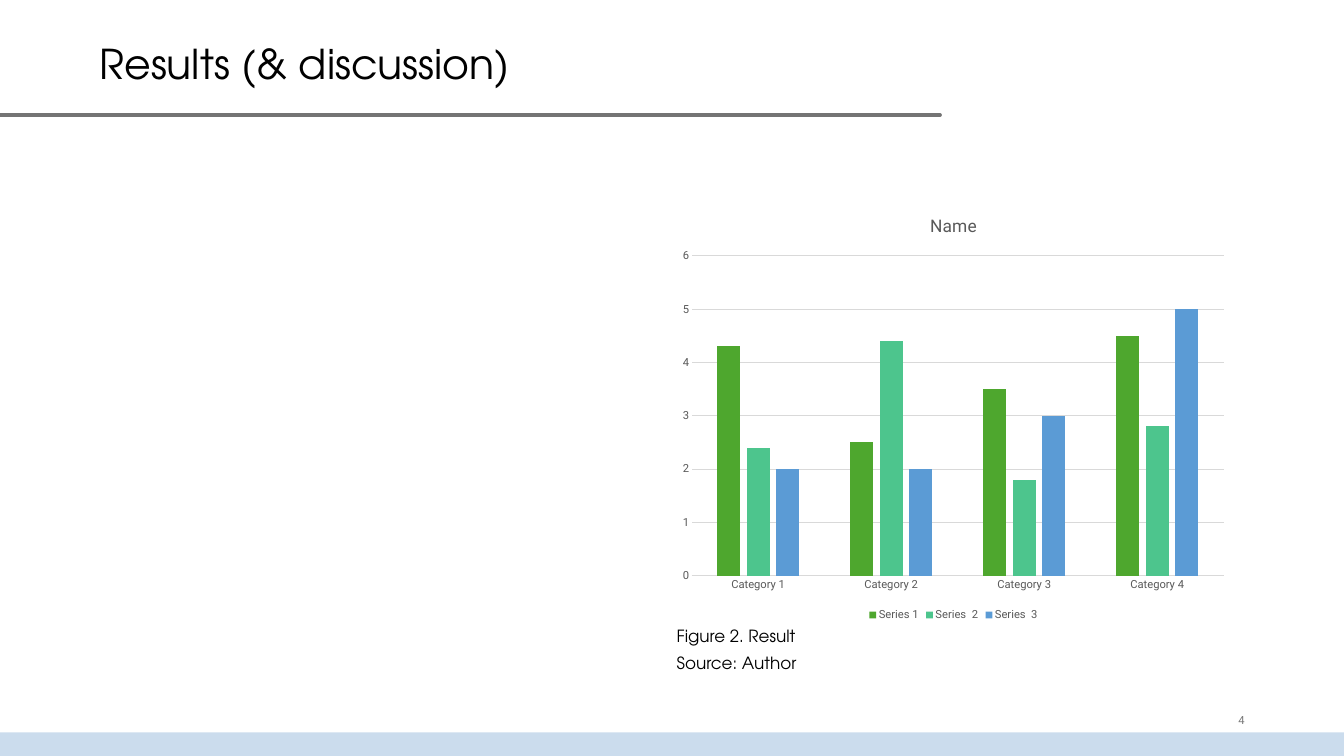
from dataclasses import dataclass

from pptx import Presentation
from pptx.chart.data import CategoryChartData
from pptx.dml.color import RGBColor
from pptx.enum import chart as ch, shapes, text
from pptx.oxml import parse_xml
from pptx.oxml.ns import nsdecls, qn
from pptx.util import Inches, Pt


@dataclass(frozen=True)
class Theme:
    head: str = "TeX Gyre Adventor"
    sans: str = "Roboto"
    ink: str = "000000"
    label: str = "595959"
    number: str = "797979"
    rule: str = "747474"
    grid: str = "D9D9D9"
    band: str = "CBDCED"
    bars: tuple = ("4EA72E", "4DC58D", "5B9BD5")
    title: float = 44
    body: float = 18
    name: float = 18.6
    small: float = 12


THEME = Theme()


def rgb(code):
    return RGBColor.from_string(code)


def style(font, face, size, color):
    font.name, font.size = face, Pt(size)
    font.color.rgb = rgb(color)


def place(shape, *box):
    shape.left, shape.top, shape.width, shape.height = map(Inches, box)


def write(frame, lines, face, size, color, align=text.PP_ALIGN.LEFT, gap=0):
    """Fill a frame with plain paragraphs, with gap points between them."""
    frame.word_wrap = True
    frame.auto_size = text.MSO_AUTO_SIZE.NONE
    for i, line in enumerate(lines):
        para = frame.add_paragraph() if i else frame.paragraphs[0]
        props = para._p.get_or_add_pPr()
        props.set("marL", "0")
        props.set("indent", "0")
        props.append(parse_xml(f"<a:buNone {nsdecls('a')}/>"))
        para.alignment = align
        para.line_spacing = 0.9
        para.space_before = Pt(gap if i else 0)
        run = para.add_run()
        run.text = line
        style(run.font, face, size, color)


def add_band(slide):
    band = slide.shapes.add_shape(
        shapes.MSO_SHAPE.RECTANGLE, 0, Inches(10.9), Inches(20), Inches(0.41))
    band.shadow.inherit = False
    band.fill.solid()
    band.fill.fore_color.rgb = rgb(THEME.band)
    band.line.fill.background()


def add_rule(slide):
    y = Inches(1.71)
    rule = slide.shapes.add_connector(
        shapes.MSO_CONNECTOR.STRAIGHT, 0, y, Inches(13.99), y)
    rule.line.color.rgb = rgb(THEME.rule)
    rule.line.width = Pt(3.75)
    rule.line._get_or_add_ln().set("cap", "rnd")
    rule._element.spPr.append(parse_xml(f"<a:effectLst {nsdecls('a')}/>"))


def add_number(slide, value):
    box = slide.shapes.add_textbox(
        Inches(14.12), Inches(10.43), Inches(4.5), Inches(0.6))
    box.text_frame.vertical_anchor = text.MSO_ANCHOR.MIDDLE
    write(box.text_frame, [value], THEME.sans, THEME.small, THEME.number,
          text.PP_ALIGN.RIGHT)


def set_plot(chart, x, y, w, h):
    """Fix the inner plot area, as fractions of the chart."""
    area = chart._chartSpace.chart.plotArea
    old = area.find(qn("c:layout"))
    if old is not None:
        area.remove(old)
    sizes = "".join(f'<c:{key} val="{val}"/>'
                    for key, val in zip("xywh", (x, y, w, h)))
    area.insert(0, parse_xml(
        f'<c:layout {nsdecls("c")}><c:manualLayout>'
        '<c:layoutTarget val="inner"/>'
        '<c:xMode val="edge"/><c:yMode val="edge"/>'
        f'{sizes}</c:manualLayout></c:layout>'))


def add_bars(slide):
    data = CategoryChartData()
    data.categories = [f"Category {n}" for n in range(1, 5)]
    data.add_series("Series 1", (4.3, 2.5, 3.5, 4.5))
    data.add_series("Series  2", (2.4, 4.4, 1.8, 2.8))
    data.add_series("Series  3", (2, 2, 3, 5))
    chart = slide.shapes.add_chart(
        ch.XL_CHART_TYPE.COLUMN_CLUSTERED, Inches(10), Inches(2.96),
        Inches(8.38), Inches(6.33), data).chart
    labels = THEME.sans, THEME.small, THEME.label
    style(chart.font, *labels)

    chart.has_title = True
    run = chart.chart_title.text_frame.paragraphs[0].add_run()
    run.text = "Name"
    style(run.font, THEME.sans, THEME.name, THEME.label)
    run.font.bold = False
    chart.chart_title.include_in_layout = False

    chart.has_legend = True
    chart.legend.position = ch.XL_LEGEND_POSITION.BOTTOM
    chart.legend.include_in_layout = False
    style(chart.legend.font, *labels)

    for axis in (chart.category_axis, chart.value_axis):
        axis.major_tick_mark = axis.minor_tick_mark = ch.XL_TICK_MARK.NONE
        style(axis.tick_labels.font, *labels)
    value = chart.value_axis
    value.minimum_scale, value.maximum_scale, value.major_unit = 0, 6, 1
    value.has_major_gridlines = True
    value.format.line.fill.background()
    for line in (chart.category_axis.format.line,
                 value.major_gridlines.format.line):
        line.color.rgb = rgb(THEME.grid)
        line.width = Pt(0.75)

    plot = chart.plots[0]
    plot.gap_width, plot.overlap = 219, -27
    plot.vary_by_categories = False
    for series, color in zip(plot.series, THEME.bars):
        series.format.fill.solid()
        series.format.fill.fore_color.rgb = rgb(color)
    set_plot(chart, 0.035, 0.134, 0.945, 0.752)


def main():
    deck = Presentation()
    deck.slide_width, deck.slide_height = Inches(20), Inches(11.25)
    slide = deck.slides.add_slide(deck.slide_layouts[1])
    add_band(slide)
    add_rule(slide)

    title, body = slide.placeholders
    place(title, 1.38, 0.6, 15.88, 1.08)
    title.text_frame.vertical_anchor = text.MSO_ANCHOR.TOP
    write(title.text_frame, ["Results (& discussion)"],
          THEME.head, THEME.title, THEME.ink)
    place(body, 9.97, 9.29, 8.4, 0.77)
    write(body.text_frame, ["Figure 2. Result", "Source: Author"],
          THEME.head, THEME.body, THEME.ink, gap=10)

    add_number(slide, "4")
    add_bars(slide)
    deck.save("out.pptx")


if __name__ == "__main__":
    main()
